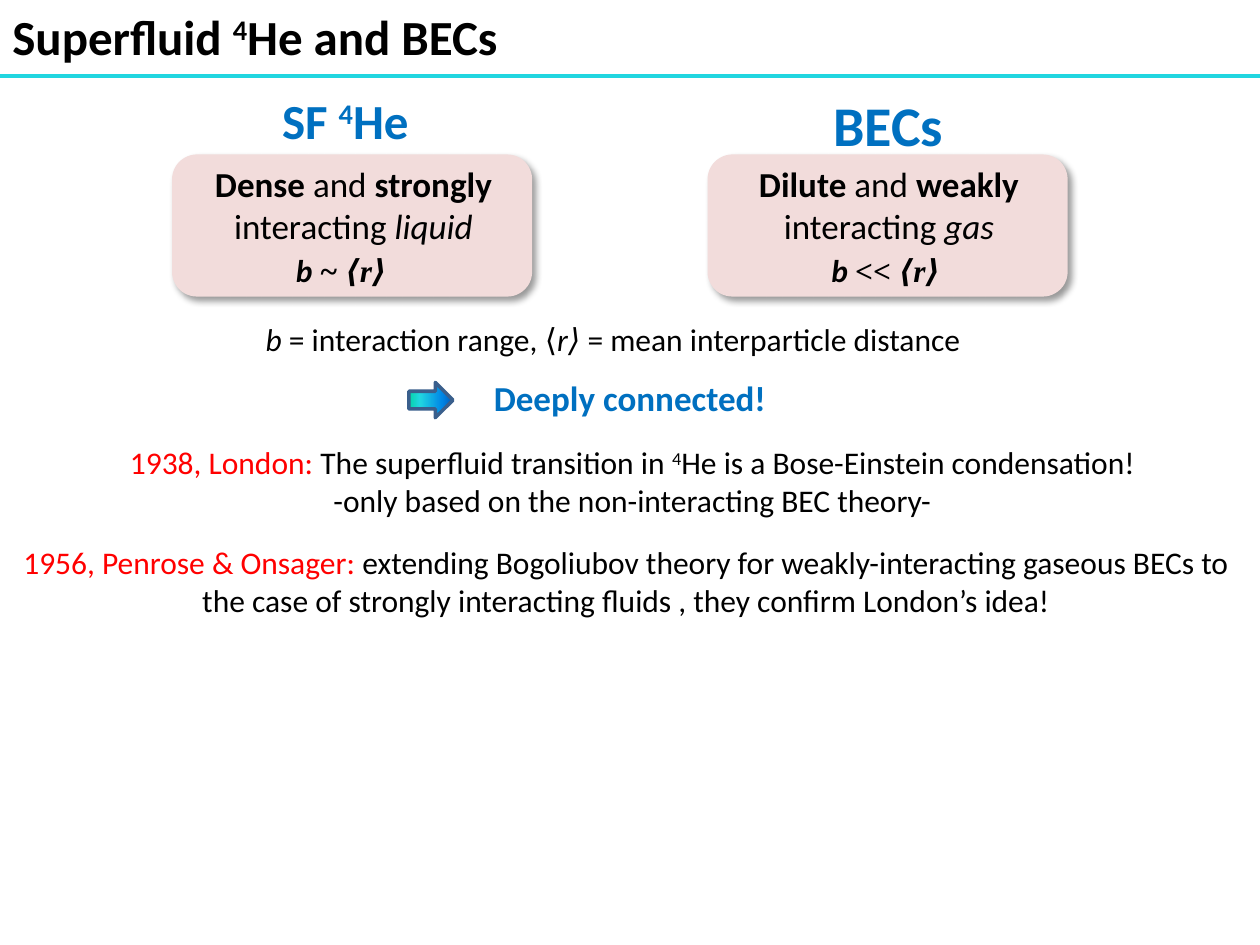
from lxml.etree import SubElement
from pptx import Presentation
from pptx.dml.color import RGBColor
from pptx.enum.shapes import MSO_CONNECTOR, MSO_SHAPE
from pptx.enum.text import MSO_AUTO_SIZE as AUTO, PP_ALIGN
from pptx.oxml.ns import qn
from pptx.util import Inches, Pt

BLACK = RGBColor(0x00, 0x00, 0x00)
BLUE = RGBColor(0x00, 0x70, 0xC0)
RED = RGBColor(0xFF, 0x00, 0x00)
PINK = RGBColor(0xF2, 0xDC, 0xDB)
CYAN = RGBColor(0x21, 0xD6, 0xE0)
ARROW_EDGE = RGBColor(0x3A, 0x5F, 0x8C)
ARROW_STOPS = [(0, "03D4A8"), (25, "21D6E0"), (75, "0087E6"), (100, "005CBF")]

SANS, SERIF = "Calibri", "Times New Roman"
BOLD, ITALIC, SUPER = {"bold": True}, {"italic": True}, {"sup": True}
BOLD_ITALIC = {"bold": True, "italic": True}


def add_run(p, text, size, color=BLACK, font=SANS, bold=False, italic=False, sup=False):
    r = p.add_run()
    r.text = text
    f = r.font
    f.name, f.size, f.bold, f.italic = font, Pt(size), bold, italic
    f.color.rgb = color
    if sup:
        r._r.get_or_add_rPr().set("baseline", "30000")


def add_text(s, box, paragraphs, size, align=PP_ALIGN.CENTER, wrap=True):
    """Each paragraph is a list of (text, run style) pairs."""
    sp = s.shapes.add_textbox(*map(Inches, box))
    tf = sp.text_frame
    tf.word_wrap = wrap
    tf.auto_size = AUTO.SHAPE_TO_FIT_TEXT
    for i, runs in enumerate(paragraphs):
        p = tf.add_paragraph() if i else tf.paragraphs[0]
        p.alignment = align
        for text, style in runs:
            add_run(p, text, size, **style)
    return tf


def add_title(s, x, y, w):
    runs = [("Superfluid ", BOLD), ("4", {**BOLD, **SUPER}), ("He and BECs", BOLD)]
    add_text(s, (x, y, w, 0.57), [runs], 28, PP_ALIGN.LEFT)
    rule = s.shapes.add_connector(MSO_CONNECTOR.STRAIGHT, Inches(x), Inches(y + 0.6),
                                  Inches(x + w), Inches(y + 0.6))
    rule.line.color.rgb = CYAN
    rule.line.width = Pt(2.25)
    SubElement(rule._element.spPr, qn("a:effectLst"))


def add_shadow(sp):
    sp.shadow.inherit = False
    effects = sp._element.spPr.find(qn("a:effectLst"))
    shadow = SubElement(effects, qn("a:outerShdw"), blurRad=str(Pt(4)), dist=str(Pt(3)),
                        dir="2700000", algn="tl", rotWithShape="0")
    color = SubElement(shadow, qn("a:srgbClr"), val="000000")
    SubElement(color, qn("a:alpha"), val="40000")


def add_card(s, x, y, w, h, statement, relation):
    sp = s.shapes.add_shape(MSO_SHAPE.ROUNDED_RECTANGLE, *map(Inches, (x, y, w, h)))
    sp.fill.solid()
    sp.fill.fore_color.rgb = PINK
    sp.line.color.rgb = PINK
    sp.line.width = Pt(2)
    add_shadow(sp)
    add_text(s, (x + 0.1, y, 2.65, 0.77), [statement], 20)
    formula = [("b ", BOLD_ITALIC), (f"{relation} ⟨r⟩", {**BOLD_ITALIC, "font": SERIF})]
    add_text(s, (x + 0.87, y + 0.7, 1.3, 0.4), [formula], 18, PP_ALIGN.LEFT)


def add_conclusion(s, x, y, w):
    # Arrow pointing right at the conclusion
    sp = s.shapes.add_shape(MSO_SHAPE.DOWN_ARROW, Inches(x + 3.28), Inches(y + 0.06),
                            Inches(0.28), Inches(0.35))
    sp.rotation = 270
    sp.shadow.inherit = False
    sp.line.color.rgb = ARROW_EDGE
    sp.line.width = Pt(2)
    sp.fill.gradient()
    sp.fill.gradient_angle = 270
    stops = sp._element.spPr.find(qn("a:gradFill")).find(qn("a:gsLst"))
    for stop in list(stops):
        stops.remove(stop)
    for position, color in ARROW_STOPS:
        stop = SubElement(stops, qn("a:gs"), pos=str(position * 1000))
        SubElement(stop, qn("a:srgbClr"), val=color)
    add_text(s, (x, y, w, 0.44), [[("Deeply connected!", {**BOLD, "color": BLUE})]], 20)


def add_history(s, x, y, w):
    red = {"color": RED}
    add_text(s, (x + 0.02, y, w, 0.71), [
        [("1938, London: ", red), ("The superfluid transition in ", {}), ("4", SUPER),
         ("He is a Bose-Einstein condensation!", {})],
        [("-only based on the non-interacting BEC theory-", {})]], 18)
    add_text(s, (x - 0.03, y + 0.79, w, 0.71), [
        [("1956, Penrose & Onsager: ", red),
         ("extending Bogoliubov theory for weakly-interacting gaseous BECs to the case of "
          "strongly interacting fluids , they confirm London’s idea!", {})]], 18)


def main():
    prs = Presentation()
    prs.slide_width, prs.slide_height = Inches(10), Inches(7.5)
    s = prs.slides.add_slide(prs.slide_layouts[6])

    add_title(s, 0, 0, 10)

    # Column headings
    heading = {**BOLD, "color": BLUE}
    tf = add_text(s, (1.48, 0.67, 2.32, 0.57),
                  [[("SF ", heading), ("4", {**heading, **SUPER}), ("He", heading)]], 28)
    tf.margin_left = Inches(0.3)
    add_text(s, (6.51, 0.67, 1.08, 0.64), [[("BECs", heading)]], 32, wrap=False)

    # Compared systems
    add_card(s, 1.38, 1.24, 2.83, 1.1,
             [("Dense", BOLD), (" and ", {}), ("strongly ", BOLD),
              ("interacting ", {}), ("liquid", ITALIC)], "~")
    add_card(s, 5.63, 1.24, 2.83, 1.1,
             [("Dilute", BOLD), (" and ", {}), ("weakly ", BOLD),
              ("interacting ", {}), ("gas", ITALIC)], "<<")

    # Meaning of the symbols
    serif = {"font": SERIF}
    add_text(s, (2.01, 2.49, 6.3, 0.4),
             [[("b", ITALIC), (" = interaction range, ", {}), ("⟨", serif), ("r", ITALIC),
               ("⟩", {**serif, **ITALIC}), (" = mean interparticle distance", {})]],
             18, PP_ALIGN.LEFT)

    add_conclusion(s, 0, 2.94, 10)
    add_history(s, 0, 3.47, 10)
    prs.save("out.pptx")


if __name__ == "__main__":
    main()
